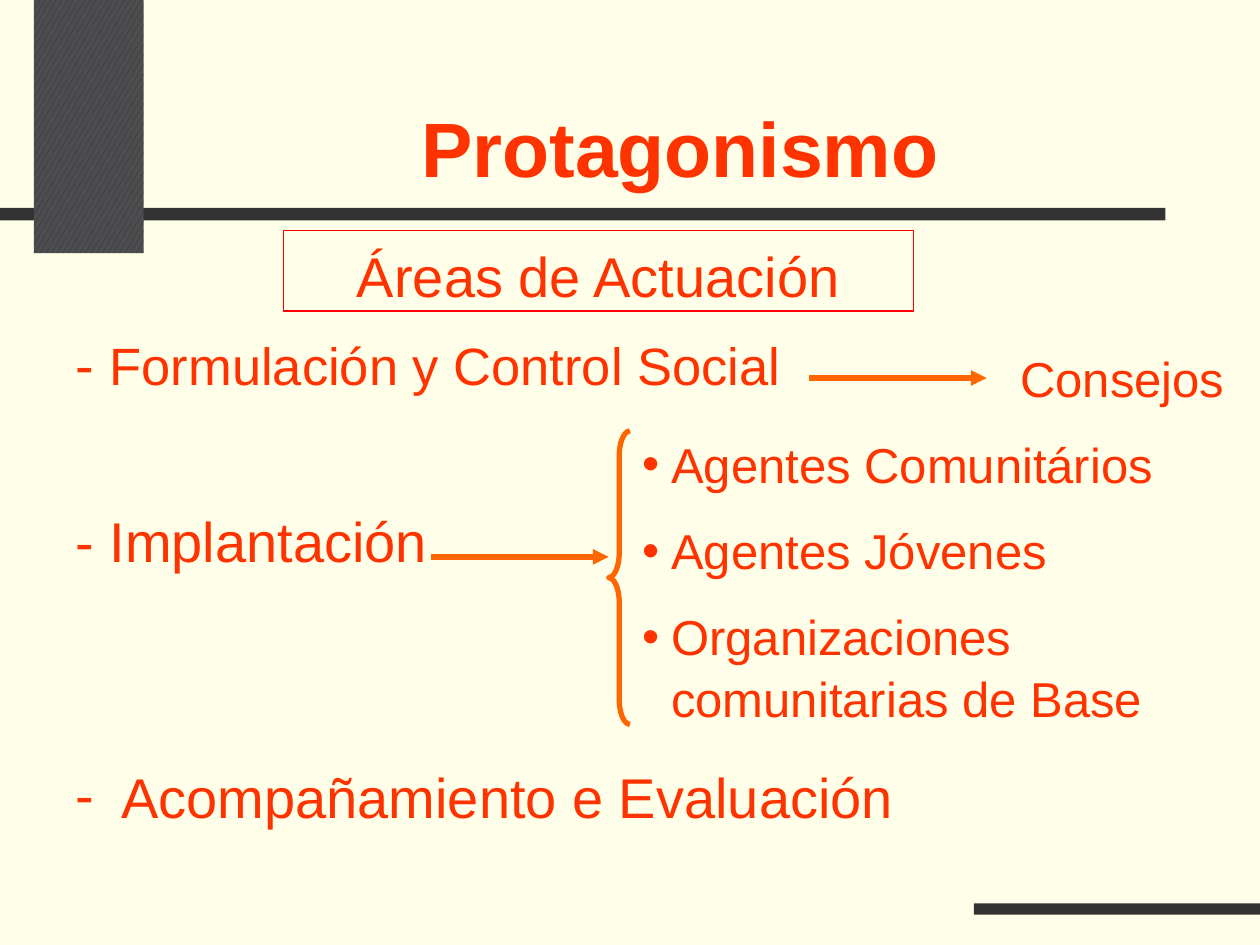
from lxml.etree import SubElement
from pptx import Presentation
from pptx.dml.color import RGBColor
from pptx.enum.dml import MSO_PATTERN
from pptx.enum.shapes import MSO_CONNECTOR, MSO_SHAPE
from pptx.enum.text import MSO_ANCHOR, PP_ALIGN
from pptx.oxml.ns import qn
from pptx.util import Inches, Pt

HUES = {"page": "FFFFE9", "bar": "333333", "weave": "262D4C", "block": "4D4D4D",
        "text": "FF3300", "frame": "FF0000", "arrow": "FF6600"}
INK = {name: RGBColor.from_string(code) for name, code in HUES.items()}

deck = Presentation()
deck.slide_width, deck.slide_height = Inches(10), Inches(7.5)
slide = deck.slides.add_slide(deck.slide_layouts[6])
slide.background.fill.solid()
slide.background.fill.fore_color.rgb = INK["page"]
shapes = slide.shapes


def add_run(para, text, size, font="Arial", bold=False):
    run = para.add_run()
    run.text = text
    run.font.size = Pt(size)
    run.font.name = font
    run.font.bold = bold
    run.font.color.rgb = INK["text"]


def set_list(para, mark, left):
    props = para._p.get_or_add_pPr()
    props.set("marL", str(Inches(left)))
    props.set("indent", str(-Inches(left)))
    SubElement(props, qn("a:buFont"), typeface="Arial")
    SubElement(props, qn("a:buChar"), char=mark)


for left, top, width, height in [(0, 1.65, 9.25, 0.1), (0.27, 0, 0.87, 2.01),
                                 (7.73, 7.17, 2.27, 0.09)]:
    bar = shapes.add_shape(MSO_SHAPE.RECTANGLE, Inches(left), Inches(top),
                           Inches(width), Inches(height))
    bar.shadow.inherit = False
    bar.line.fill.background()
    if height > 1:
        bar.fill.patterned()
        bar.fill.pattern = MSO_PATTERN.LARGE_CONFETTI
        bar.fill.fore_color.rgb = INK["weave"]
        bar.fill.back_color.rgb = INK["block"]
    else:
        bar.fill.solid()
        bar.fill.fore_color.rgb = INK["bar"]

title = shapes.add_textbox(Inches(1.33), Inches(0.27), Inches(8.14), Inches(1.31)).text_frame
title.word_wrap = True
title.vertical_anchor = MSO_ANCHOR.BOTTOM
title.paragraphs[0].alignment = PP_ALIGN.CENTER
add_run(title.paragraphs[0], "Protagonismo", 44, bold=True)

final = shapes.add_textbox(Inches(0.5), Inches(6), Inches(8.17), Inches(0.63)).text_frame
final.word_wrap = True
para = final.paragraphs[0]
set_list(para, "-", 0.24)
add_run(para, " ", 32, "TeX Gyre Adventor")
add_run(para, "Acompañamiento e Evaluación", 32)

areas = shapes.add_textbox(Inches(0.5), Inches(2.67), Inches(6.08), Inches(1.98)).text_frame
areas.word_wrap = True
areas.margin_top = Inches(0.09)
para = areas.paragraphs[0]
para.line_spacing = 0.7
add_run(para, "- ", 32)
add_run(para, "Formulación y Control Social", 30)
para = areas.add_paragraph()
para.space_before = Pt(64)
add_run(para, "- Implantación", 32)

frame = shapes.add_shape(MSO_SHAPE.RECTANGLE, Inches(2.25), Inches(1.83), Inches(5), Inches(0.64))
frame.shadow.inherit = False
frame.fill.background()
frame.line.color.rgb = INK["frame"]
frame.line.width = Pt(0.75)
frame.text_frame.vertical_anchor = MSO_ANCHOR.TOP
frame.text_frame.margin_top = Inches(0.09)
para = frame.text_frame.paragraphs[0]
para.alignment = PP_ALIGN.CENTER
add_run(para, "Áreas de Actuación", 32)

actors = shapes.add_textbox(Inches(5), Inches(2.67), Inches(5), Inches(3.14)).text_frame
actors.word_wrap = True
actors.margin_top = Inches(0.07)
para = actors.paragraphs[0]
para.line_spacing = 1.05
para._p.get_or_add_pPr().set("marL", str(Inches(3)))
add_run(para, "Consejos", 28)
for name in ["Agentes Comunitários", "Agentes Jóvenes", "Organizaciones comunitarias de Base"]:
    para = actors.add_paragraph()
    para.line_spacing = 1.05
    para.space_before = Pt(14)
    set_list(para, "•", 0.23)
    add_run(para, name, 28)

for left, top in [(6.42, 3), (3.42, 4.42)]:
    arrow = shapes.add_connector(MSO_CONNECTOR.STRAIGHT, Inches(left), Inches(top),
                                 Inches(left + 1.41), Inches(top))
    arrow.line.color.rgb = INK["arrow"]
    arrow.line.width = Pt(3)
    SubElement(arrow.line._get_or_add_ln(), qn("a:tailEnd"), type="triangle")
    SubElement(arrow._element.spPr, qn("a:effectLst"))

brace = shapes.add_shape(MSO_SHAPE.LEFT_BRACE, Inches(4.83), Inches(3.42), Inches(0.17), Inches(2.33))
brace.shadow.inherit = False
brace.adjustments[0] = 1.17
brace.fill.background()
brace.line.color.rgb = INK["arrow"]
brace.line.width = Pt(3)

deck.save("out.pptx")
